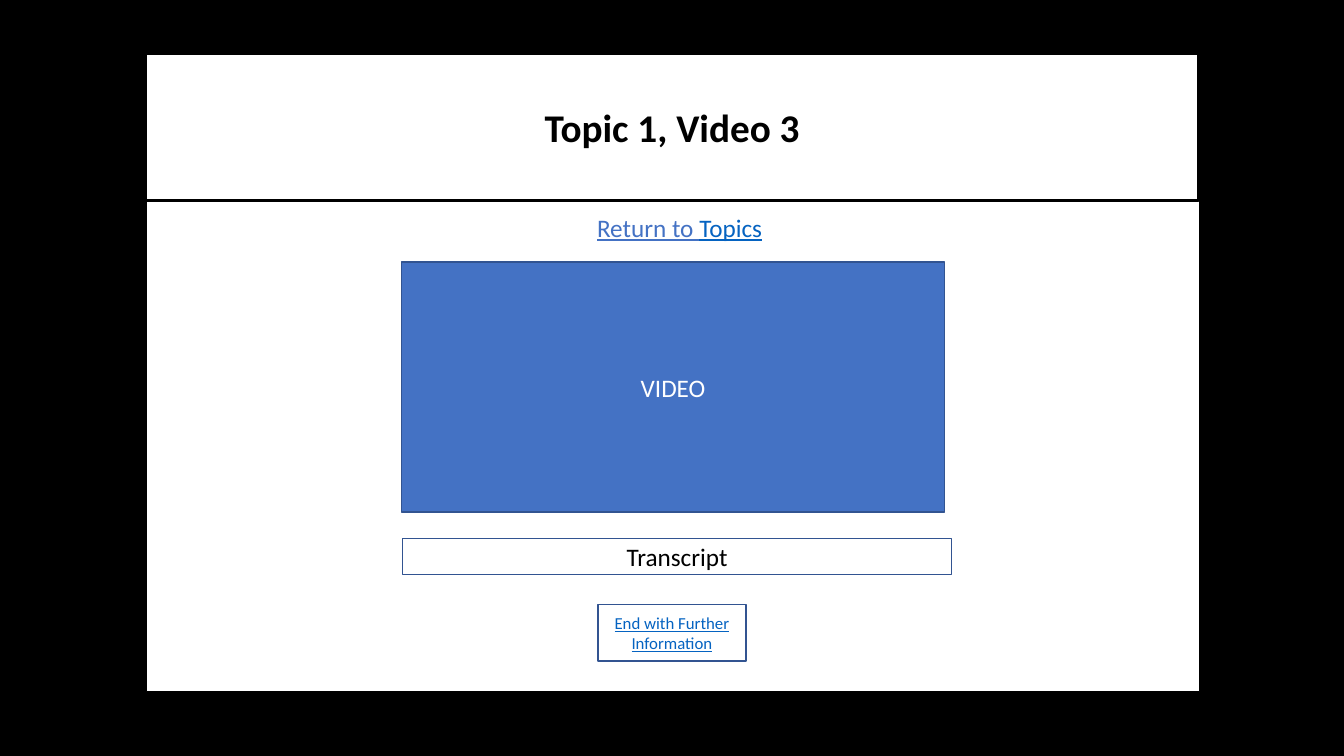
from pptx import Presentation
from pptx import util as u
from pptx.dml.color import RGBColor
from pptx.enum import shapes, text

BLACK, WHITE, BLUE, EDGE, LINK = "000000", "FFFFFF", "4472C4", "325491", "0563C1"


def rgb(value):
    return RGBColor.from_string(value)


def style_box(box, fill, edge, weight=1, spans=(), **font_format):
    """Paint a box and write its (words, colour) spans centred."""
    box.fill.solid()
    box.fill.fore_color.rgb = rgb(fill)
    box.line.color.rgb = rgb(edge)
    box.line.width = u.Pt(weight)
    if not spans:
        return
    frame = box.text_frame
    frame.auto_size = text.MSO_AUTO_SIZE.NONE
    frame.word_wrap = True
    frame.vertical_anchor = text.MSO_ANCHOR.MIDDLE
    para = frame.paragraphs[0]
    para.alignment = text.PP_ALIGN.CENTER
    for words, colour in spans:
        span = para.add_run()
        span.text = words
        span.font.color.rgb = rgb(colour)
        for name, value in {"name": "Calibri", "size": u.Pt(18), **font_format}.items():
            setattr(span.font, name, value)


deck = Presentation()
deck.slide_width, deck.slide_height = u.Inches(13.33), u.Inches(7.5)
page = deck.slides.add_slide(deck.slide_layouts[5])
page.background.fill.solid()
page.background.fill.fore_color.rgb = rgb(BLACK)

title = page.shapes.title
title_place = {"left": 1.44, "top": 0.53, "width": 10.45, "height": 1.46}
for side, length in title_place.items():
    setattr(title, side, u.Inches(length))
style_box(title, WHITE, BLACK, 2.25, [("Topic 1, Video 3", BLACK)],
          size=u.Pt(28), bold=True)

boxes = [
    ((1.45, 0.53, 10.45, 6.33), dict(fill=WHITE, edge=BLACK)),
    ((5.93, 6, 1.47, 0.56), dict(fill=WHITE, edge=EDGE, size=u.Pt(12), underline=True,
                                 spans=[("End with Further Information", LINK)])),
    ((3.13, 2.14, 7.22, 0.23), dict(fill=WHITE, edge=WHITE, underline=True,
                                    spans=[("Return to ", BLUE), ("Topics", LINK)])),
    ((3.98, 2.6, 5.39, 2.48), dict(fill=BLUE, edge=EDGE, spans=[("VIDEO", WHITE)])),
    ((3.99, 5.34, 5.45, 0.36), dict(fill=WHITE, edge=EDGE,
                                    spans=[("Transcript", BLACK)])),
]
for place, look in boxes:
    box = page.shapes.add_shape(shapes.MSO_SHAPE.RECTANGLE, *map(u.Inches, place))
    box.shadow.inherit = False
    style_box(box, **look)

# The large panel lies behind the title
panel = page.shapes[1]
title._element.addprevious(panel._element)

deck.save("out.pptx")
